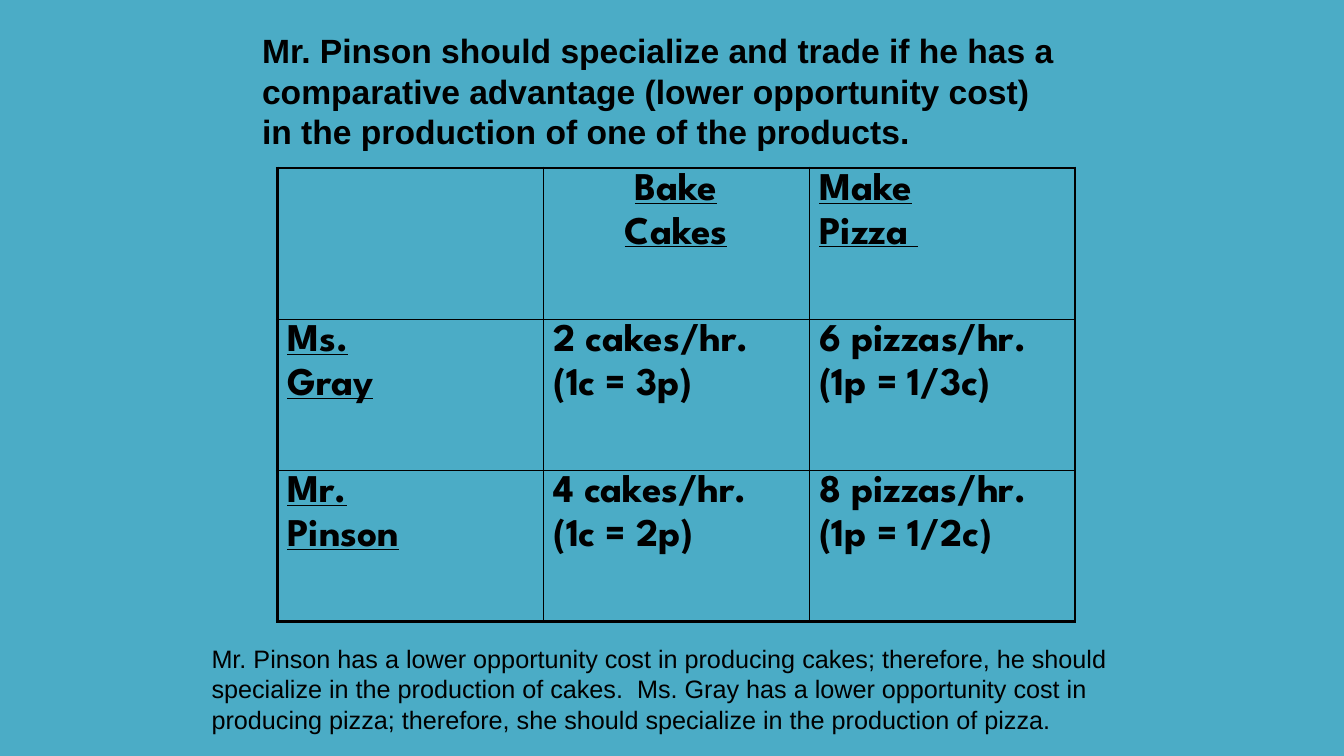
from lxml.etree import SubElement
from pptx import Presentation
from pptx.dml.color import RGBColor
from pptx.enum.text import MSO_ANCHOR as Anchor, MSO_AUTO_SIZE as AutoSize, PP_ALIGN as Align
from pptx.oxml.ns import qn
from pptx.util import Pt

BLACK = "000000"
HEADING = [
    "Mr. Pinson should specialize and trade if he has a",
    "comparative advantage (lower opportunity cost)",
    "in the production of one of the products.",
]
OUTPUT = [
    [[], ["Bake", "Cakes"], ["Make", "Pizza "]],
    [["Ms.", "Gray"], ["2 cakes/hr.", "(1c = 3p)"], ["6 pizzas/hr.", "(1p = 1/3c)"]],
    [["Mr.", "Pinson"], ["4 cakes/hr.", "(1c = 2p)"], ["8 pizzas/hr.", "(1p = 1/2c)"]],
]
CONCLUSION = (
    "Mr. Pinson has a lower opportunity cost in producing cakes; therefore, he should "
    "specialize in the production of cakes.  Ms. Gray has a lower opportunity cost in "
    "producing pizza; therefore, she should specialize in the production of pizza."
)


def color(value):
    return RGBColor.from_string(value)


def write(tf, lines, size=18, font="Arial", bold=False, underline=False,
          align=Align.LEFT, before=0):
    """Write each line as a paragraph."""
    for i, line in enumerate(lines):
        p = tf.paragraphs[0] if i == 0 else tf.add_paragraph()
        p.alignment = align
        p.space_before = Pt(before)
        r = p.add_run()
        r.text = line
        f = r.font
        f.name, f.size, f.bold, f.underline = font, Pt(size), bold, underline
        f.color.rgb = color(BLACK)


def add_heading(s, lines, left, top, width, height):
    title = s.shapes.title
    title.left, title.top, title.width, title.height = map(Pt, (left, top, width, height))
    tf = title.text_frame
    tf.auto_size = AutoSize.NONE
    tf.vertical_anchor = Anchor.TOP
    write(tf, lines, size=24, bold=True)


def add_note(s, text, left, top, width, height):
    tf = s.shapes.add_textbox(*map(Pt, (left, top, width, height))).text_frame
    tf.word_wrap = True
    write(tf, [text])


def set_borders(cell, **widths):
    tc_pr = cell._tc.get_or_add_tcPr()
    for side in "LRTB":
        ln = SubElement(tc_pr, qn(f"a:ln{side}"), w=str(Pt(widths[side])))
        fill = SubElement(ln, qn("a:solidFill"))
        SubElement(fill, qn("a:srgbClr"), val=BLACK)


def add_grid(s, rows, left, top, width, height):
    last_row, last_col = len(rows) - 1, len(rows[0]) - 1
    table = s.shapes.add_table(last_row + 1, last_col + 1,
                               *map(Pt, (left, top, width, height))).table
    table.first_row = table.horz_banding = False
    for i, row in enumerate(rows):
        for j, lines in enumerate(row):
            cell = table.cell(i, j)
            # Heavy outer frame, thin inner rules
            set_borders(cell,
                        L=2.25 if j == 0 else 1, R=2.25 if j == last_col else 1,
                        T=2.25 if i == 0 else 1, B=2.25 if i == last_row else 1)
            cell.fill.background()
            # Row and column headers are underlined
            write(cell.text_frame, lines, size=28, font="League Spartan", bold=True,
                  underline=i == 0 or j == 0, before=5.6,
                  align=Align.CENTER if (i, j) == (0, 1) else Align.LEFT)


def main():
    prs = Presentation()
    prs.slide_width, prs.slide_height = Pt(960), Pt(540)
    s = prs.slides.add_slide(prs.slide_layouts[5])
    s.background.fill.solid()
    s.background.fill.fore_color.rgb = color("4BACC6")

    add_heading(s, HEADING, 180, 18, 585, 94)
    add_grid(s, OUTPUT, 198, 120, 570, 324)
    add_note(s, CONCLUSION, 144, 456, 666, 73)

    prs.save("out.pptx")


if __name__ == "__main__":
    main()
